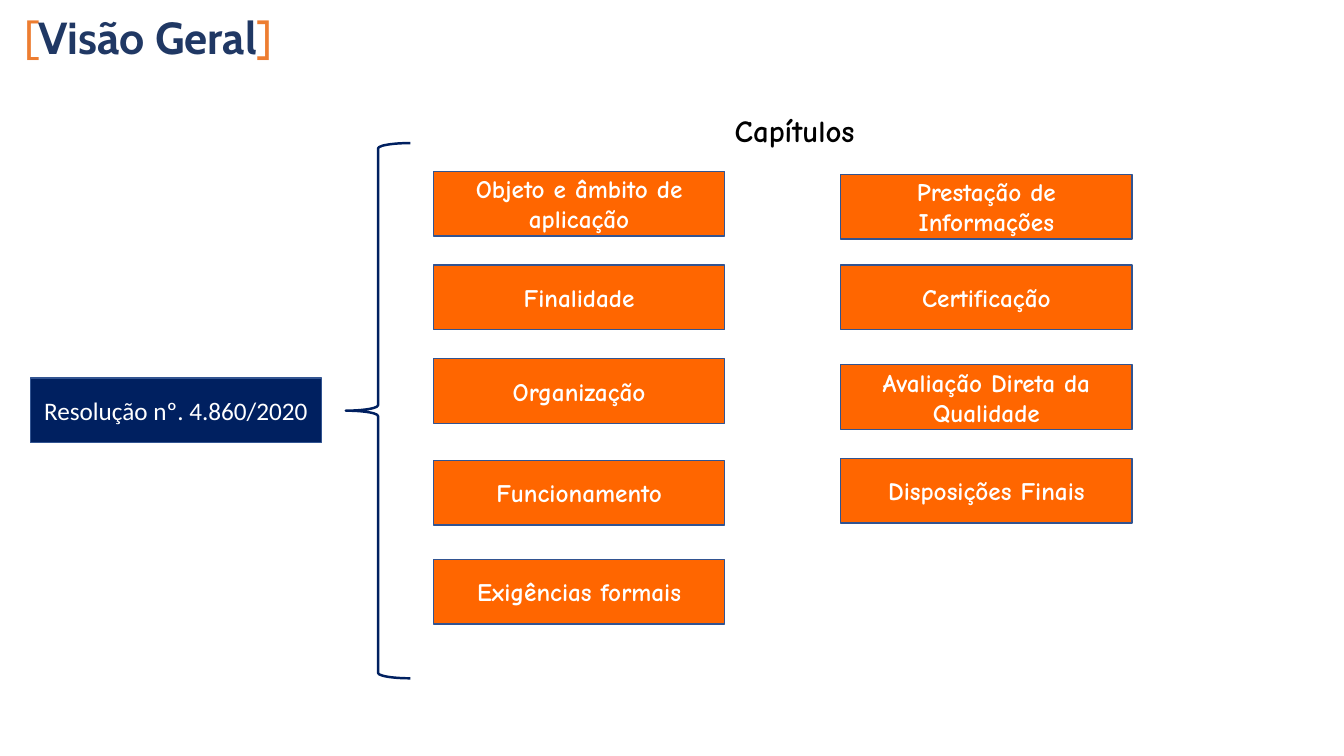
"""Build the overview slide of a resolution and its chapters."""
from dataclasses import dataclass

from pptx import Presentation
from pptx.dml.color import RGBColor
from pptx.enum.shapes import MSO_SHAPE as Shape
from pptx.enum.text import MSO_ANCHOR as Anchor, MSO_AUTO_SIZE as Fit, PP_ALIGN as Align
from pptx.slide import Slide
from pptx.text.text import TextFrame
from pptx.util import Pt

NAVY = RGBColor(0x00, 0x20, 0x60)
TITLE = RGBColor(0x20, 0x38, 0x64)
AMBER = RGBColor(0xED, 0x7D, 0x31)
ORANGE = RGBColor(0xFF, 0x66, 0x00)
EDGE = RGBColor(0x32, 0x54, 0x91)
WHITE = RGBColor(0xFF, 0xFF, 0xFF)
BLACK = RGBColor(0x00, 0x00, 0x00)

WIDTH, HEIGHT = 208.1, 46.1
LEFT, RIGHT = 309.6, 600.5


@dataclass
class Box:
    text: str
    left: float
    top: float
    fill: RGBColor = ORANGE
    font: str = "Comic Neue"
    bold: bool = True


BOXES = [
    Box("Resolução nº. 4.860/2020", 21.6, 270, NAVY, "Calibri", False),
    Box("Objeto e âmbito de aplicação", LEFT, 122.4),
    Box("Finalidade", LEFT, 189.4),
    Box("Organização", LEFT, 256.3),
    Box("Funcionamento", LEFT, 329),
    Box("Exigências formais", LEFT, 399.6),
    Box("Prestação de Informações", RIGHT, 124.6),
    Box("Certificação", RIGHT, 189.4),
    Box("Avaliação Direta da Qualidade", RIGHT, 260.6),
    Box("Disposições Finais", RIGHT, 327.6),
]


def add_box(slide: Slide, box: Box) -> None:
    shape = slide.shapes.add_shape(
        Shape.RECTANGLE, Pt(box.left), Pt(box.top), Pt(WIDTH), Pt(HEIGHT))
    shape.shadow.inherit = False
    shape.fill.solid()
    shape.fill.fore_color.rgb = box.fill
    shape.line.color.rgb = EDGE
    shape.line.width = Pt(1)
    frame = shape.text_frame
    frame.word_wrap = True
    frame.vertical_anchor = Anchor.MIDDLE
    para = frame.paragraphs[0]
    para.text = box.text
    para.alignment = Align.CENTER
    font = para.font
    font.name, font.size, font.bold = box.font, Pt(18), box.bold
    font.color.rgb = WHITE


def add_brace(slide: Slide) -> None:
    brace = slide.shapes.add_shape(
        Shape.LEFT_BRACE, Pt(247), Pt(102.2), Pt(46.1), Pt(382.3))
    brace.shadow.inherit = False
    brace.fill.background()
    brace.line.color.rgb = NAVY
    brace.line.width = Pt(1.75)


def add_label(slide: Slide, left: float, top: float,
              width: float, height: float) -> TextFrame:
    label = slide.shapes.add_textbox(Pt(left), Pt(top), Pt(width), Pt(height))
    frame = label.text_frame
    frame.word_wrap = True
    frame.auto_size = Fit.SHAPE_TO_FIT_TEXT
    return frame


def add_title(slide: Slide) -> None:
    para = add_label(slide, 10.1, 3.6, 936, 46.1).paragraphs[0]
    para.font.name, para.font.size = "Cabin", Pt(32)
    for text, color, bold in (("[", AMBER, False),
                              ("Visão Geral", TITLE, True),
                              ("]", AMBER, False)):
        run = para.add_run()
        run.text = text
        run.font.bold = bold
        run.font.color.rgb = color


def add_head(slide: Slide) -> None:
    para = add_label(slide, 517.7, 76.3, 373.7, 33.8).paragraphs[0]
    para.text = "Capítulos"
    font = para.font
    font.name, font.size, font.bold = "Comic Neue", Pt(22), True
    font.color.rgb = BLACK


def main() -> None:
    deck = Presentation()
    deck.slide_width, deck.slide_height = Pt(960), Pt(540)
    slide = deck.slides.add_slide(deck.slide_layouts[6])
    add_title(slide)
    for box in BOXES:
        add_box(slide, box)
    add_brace(slide)
    add_head(slide)
    deck.save("out.pptx")


if __name__ == "__main__":
    main()
